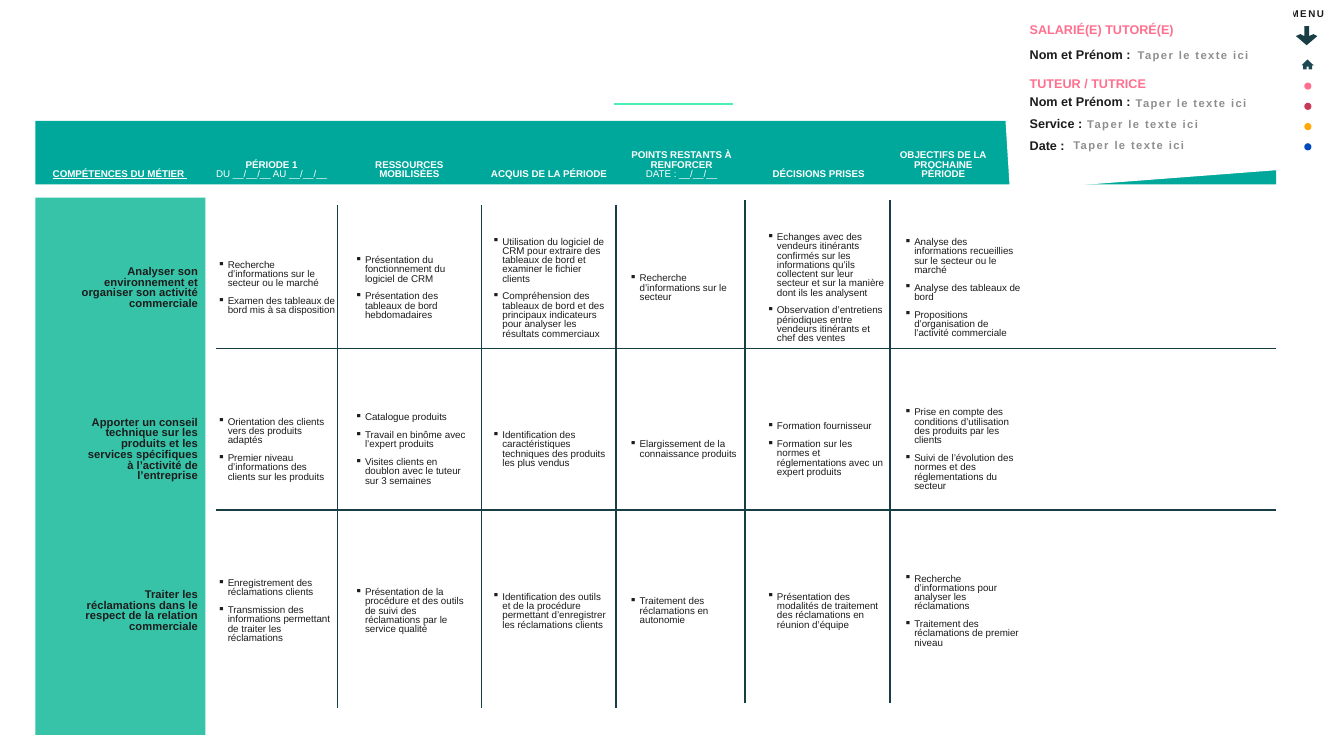
import copy
import lxml.etree
import pptx
import pptx.dml.color
import pptx.enum.shapes
import pptx.enum.text
import pptx.oxml.ns
import pptx.util

Cm, Pt = pptx.util.Cm, pptx.util.Pt
qn = pptx.oxml.ns.qn
SHAPE = pptx.enum.shapes.MSO_SHAPE
ALIGN = pptx.enum.text.PP_ALIGN
ANCHOR = pptx.enum.text.MSO_ANCHOR
NO_GRID_STYLE = "{2D5ABB26-0587-4C30-8999-92F81FD0307C}"

COLORS = {
    "ink": "1C1C1C", "dark": "183D44", "house": "1D4851", "white": "FFFFFF",
    "pink": "FF708F", "crimson": "C93857", "amber": "FFA807", "blue": "0048BE",
    "teal": "00A79B", "mint": "36C3A8", "accent": "49F0B1", "grey": "8E8E8E",
}

HEADERS = [
    ["COMPÉTENCES DU MÉTIER "],
    ["PÉRIODE 1", "DU __/__/__ AU __/__/__"],
    ["RESSOURCES MOBILISÉES"],
    ["ACQUIS DE LA PÉRIODE"],
    ["POINTS RESTANTS À RENFORCER", "DATE : __/__/__"],
    ["DÉCISIONS PRISES"],
    ["OBJECTIFS DE LA\nPROCHAINE PÉRIODE"],
]
SKILLS = [
    [
        ["Analyser son environnement et organiser son activité commerciale"],
        ["Recherche d’informations sur le secteur ou le marché",
         "Examen des tableaux de bord mis à sa disposition"],
        ["Présentation du fonctionnement du logiciel de CRM",
         "Présentation des tableaux de bord hebdomadaires"],
        ["Utilisation du logiciel de CRM pour extraire des tableaux de bord et examiner le fichier clients",
         "Compréhension des tableaux de bord et des principaux indicateurs pour analyser les résultats commerciaux"],
        ["Recherche d’informations sur le secteur"],
        ["Echanges avec des vendeurs itinérants confirmés sur les informations qu’ils collectent "
         "sur leur secteur et sur la manière dont ils les analysent",
         "Observation d’entretiens périodiques entre vendeurs itinérants et chef des ventes"],
        ["Analyse des informations recueillies sur le secteur ou le marché",
         "Analyse des tableaux de bord",
         "Propositions d’organisation de l’activité commerciale"],
    ],
    [
        ["Apporter un conseil technique sur les produits et les services spécifiques à l’activité de l’entreprise"],
        ["Orientation des clients vers des produits adaptés",
         "Premier niveau d’informations des clients sur les produits"],
        ["Catalogue produits",
         "Travail en binôme avec l’expert produits",
         "Visites clients en doublon avec le tuteur sur 3 semaines"],
        ["Identification des caractéristiques techniques des produits les plus vendus"],
        ["Elargissement de la connaissance produits"],
        ["Formation fournisseur",
         "Formation sur les normes et réglementations avec un expert produits"],
        ["Prise en compte des conditions d’utilisation des produits par les clients",
         "Suivi de l’évolution des normes et des réglementations du secteur"],
    ],
    [
        ["Traiter les réclamations dans le respect de la relation commerciale"],
        ["Enregistrement des réclamations clients",
         "Transmission des informations permettant de traiter les réclamations"],
        ["Présentation de la procédure et des outils de suivi des réclamations par le service qualité"],
        ["Identification des outils et de la procédure permettant d’enregistrer les réclamations clients"],
        ["Traitement des réclamations en autonomie"],
        ["Présentation des modalités de traitement des réclamations en réunion d’équipe"],
        ["Recherche d’informations pour analyser les réclamations",
         "Traitement des réclamations de premier niveau"],
    ],
]


def rgb(name):
    return pptx.dml.color.RGBColor.from_string(COLORS[name])


def write(tf, lines, size=7, color="ink", bold=False, light_tail=False, underline=False,
          align=ALIGN.LEFT, spacing=None, after=None, bullet=False, tracking=None):
    """Fill a text frame with one paragraph per line; light_tail unbolds all but the first."""
    for i, line in enumerate(lines):
        p = tf.add_paragraph() if i else tf.paragraphs[0]
        p.text = line
        p.alignment = align
        if bullet:
            pPr = p._p.get_or_add_pPr()
            pPr.set("marL", str(Cm(0.25)))
            pPr.set("indent", str(-Cm(0.25)))
            lxml.etree.SubElement(pPr, qn("a:buChar")).set("char", "▪")
        if spacing:
            p.line_spacing = spacing
        if after:
            p.space_after = Pt(after)
        for r in p.runs:
            r.font.name = "Arial"
            r.font.size = Pt(size)
            r.font.bold = bold and not (light_tail and i)
            r.font.underline = underline
            r.font.color.rgb = rgb(color)
            if tracking:
                r._r.get_or_add_rPr().set("spc", str(tracking))
        # Line breaks take the format of the text around them
        for br in p._p.findall(qn("a:br")):
            br.append(copy.deepcopy(p.runs[0]._r.get_or_add_rPr()))


class Board:
    def __init__(self, slide):
        self.shapes = slide.shapes

    def paint(self, sp, color):
        sp.shadow.inherit = False
        sp.fill.solid()
        sp.fill.fore_color.rgb = rgb(color)
        sp.line.fill.background()

    def shape(self, kind, x, y, w, h, color):
        self.paint(self.shapes.add_shape(kind, Cm(x), Cm(y), Cm(w), Cm(h)), color)

    def outline(self, points, color):
        start, *rest = [(Cm(x), Cm(y)) for x, y in points]
        builder = self.shapes.build_freeform(*start)
        builder.add_line_segments(rest, close=True)
        self.paint(builder.convert_to_shape(), color)

    def line(self, x1, y1, x2, y2, color="dark", width=1):
        cn = self.shapes.add_connector(pptx.enum.shapes.MSO_CONNECTOR.STRAIGHT,
                                       Cm(x1), Cm(y1), Cm(x2), Cm(y2))
        cn.line.color.rgb = rgb(color)
        cn.line.width = Pt(width)
        lxml.etree.SubElement(cn._element.spPr, qn("a:effectLst"))

    def text(self, x, y, w, h, lines, wrap=True, middle=False, **fmt):
        tf = self.shapes.add_textbox(Cm(x), Cm(y), Cm(w), Cm(h)).text_frame
        tf.word_wrap = wrap
        if middle:
            tf.vertical_anchor = ANCHOR.MIDDLE
            tf.margin_top = tf.margin_bottom = 0
        write(tf, lines, **fmt)

    def table(self, x, y, widths, row_height, rows, margins, anchor, style_for):
        table = self.shapes.add_table(len(rows), len(widths), Cm(x), Cm(y), Cm(sum(widths)),
                                      Cm(row_height * len(rows))).table
        table.first_row = table.horz_banding = False
        table._tbl.tblPr.find(qn("a:tableStyleId")).text = NO_GRID_STYLE
        for column, width in zip(table.columns, widths):
            column.width = Cm(width)
        for r, row in enumerate(rows):
            table.rows[r].height = Cm(row_height)
            for c, lines in enumerate(row):
                cell = table.cell(r, c)
                cell.fill.background()
                cell.vertical_anchor = anchor
                (cell.margin_left, cell.margin_top,
                 cell.margin_right, cell.margin_bottom) = map(Cm, margins)
                write(cell.text_frame, lines, spacing=0.85, **style_for(c))


def header_style(column):
    return dict(color="white", bold=True, light_tail=True, underline=column == 0, align=ALIGN.CENTER)


def skill_style(column):
    if column == 0:
        return dict(size=8, bold=True, align=ALIGN.RIGHT)
    return dict(bullet=True, after=6)


def main():
    prs = pptx.Presentation()
    prs.slide_width, prs.slide_height = Cm(33.87), Cm(19.05)
    board = Board(prs.slides.add_slide(prs.slide_layouts[6]))

    # Menu strip
    board.text(32.26, 0.08, 1.37, 0.56, ["MENU"], wrap=False, bold=True,
               align=ALIGN.CENTER, tracking=110)
    board.outline([(32.84, 1.75), (32.93, 1.75), (32.93, 1.68), (32.98, 1.68), (32.98, 1.75),
                   (33.07, 1.75), (33.07, 1.65), (33.11, 1.65), (32.95, 1.5), (32.8, 1.65),
                   (32.84, 1.65)], "house")
    for i, color in enumerate(["pink", "crimson", "amber", "blue"]):
        board.shape(SHAPE.OVAL, 32.87, 2.08 + 0.51 * i, 0.18, 0.18, color)
    board.outline([(32.66, 0.91), (32.77, 0.86), (32.87, 0.91), (32.87, 0.66), (32.99, 0.66),
                   (32.99, 0.91), (33.1, 0.86), (33.2, 0.91), (32.93, 1.14)], "dark")

    # Coloured bands, grid lines and the slanted card
    board.shape(SHAPE.RECTANGLE, 0.89, 4.98, 4.29, 13.54, "mint")
    board.shape(SHAPE.RECTANGLE, 0.89, 3.05, 31.27, 1.6, "teal")
    for x, top in [(8.51, 5.16), (12.14, 5.16), (15.52, 5.16), (18.77, 5.05), (22.43, 5.05)]:
        board.line(x, top, x, top + 12.67)
    for y in (8.79, 12.85):
        board.line(5.44, y, 32.16, y)
    board.outline([(32.82, 4.24), (32.49, -1.3), (25.07, -1.3), (25.45, 4.8)], "white")
    board.line(15.47, 2.62, 18.47, 2.62, "accent", 2)

    # Identity card
    for y, heading in [(0.43, "SALARIÉ(E) TUTORÉ(E)"), (1.8, "TUTEUR / TUTRICE")]:
        board.text(25.7, y, 5.51, 0.76, [heading], size=9, color="pink", bold=True)
    for y, h, labels in [(1.09, 0.71, ["Nom et Prénom :"]),
                         (2.29, 2.03, ["Nom et Prénom :", "Service :", "Date :"])]:
        board.text(25.7, y, 6.81, h, labels, size=9, bold=True, spacing=0.9, after=6)
    for x, y, w in [(28.42, 1.12, 4.52), (28.37, 2.34, 4.6), (27.15, 2.87, 5.74), (26.8, 3.4, 4.27)]:
        board.text(x, y, w, 0.56, ["Taper le texte ici"], middle=True, size=8, color="grey",
                   bold=True, spacing=0.9, tracking=100)

    # Column headings and skills
    board.table(0.86, 3.05, [4.32, 3.33, 3.61, 3.43, 3.25, 3.66, 2.62], 1.57, [HEADERS],
                (0.2, 0.1, 0.2, 0.1), ANCHOR.BOTTOM, header_style)
    board.table(1.83, 5.23, [3.46] * 7, 4.07, SKILLS,
                (0.2, 0.2, 0.3, 0.2), ANCHOR.MIDDLE, skill_style)

    prs.save("out.pptx")


if __name__ == "__main__":
    main()
